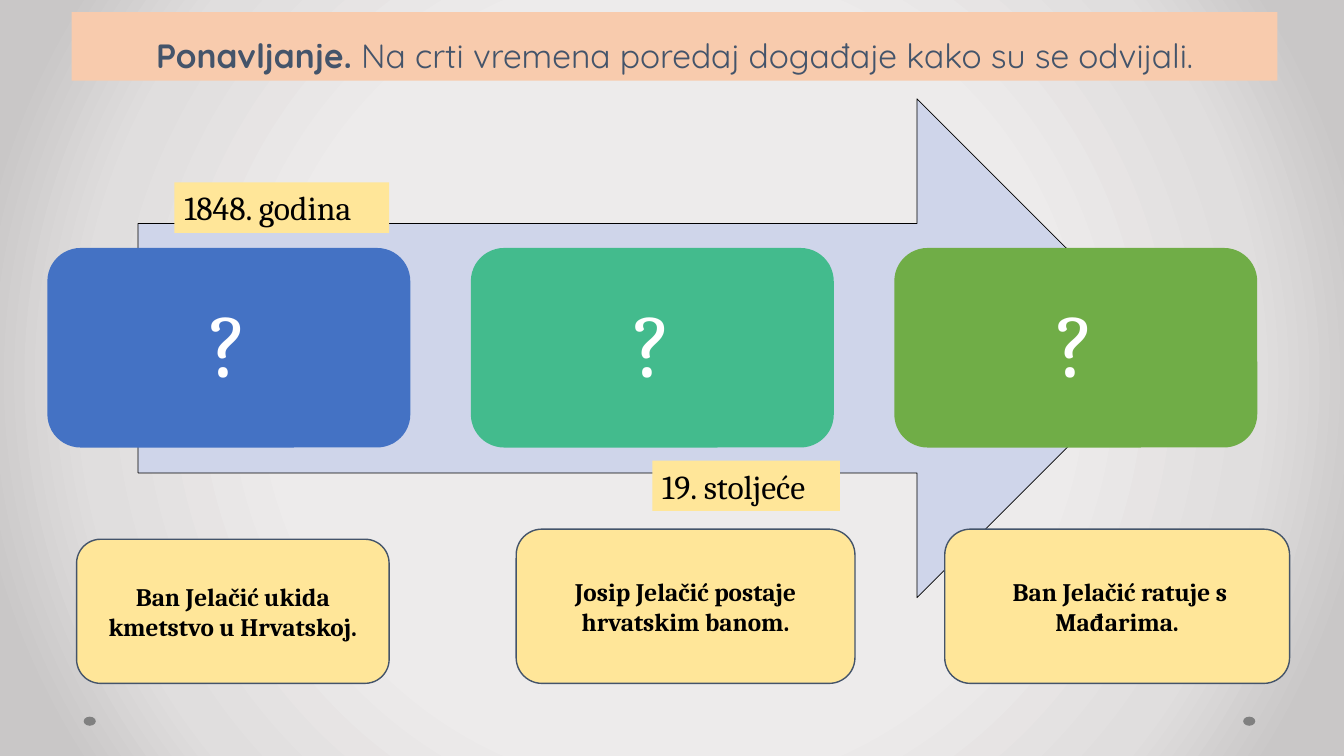
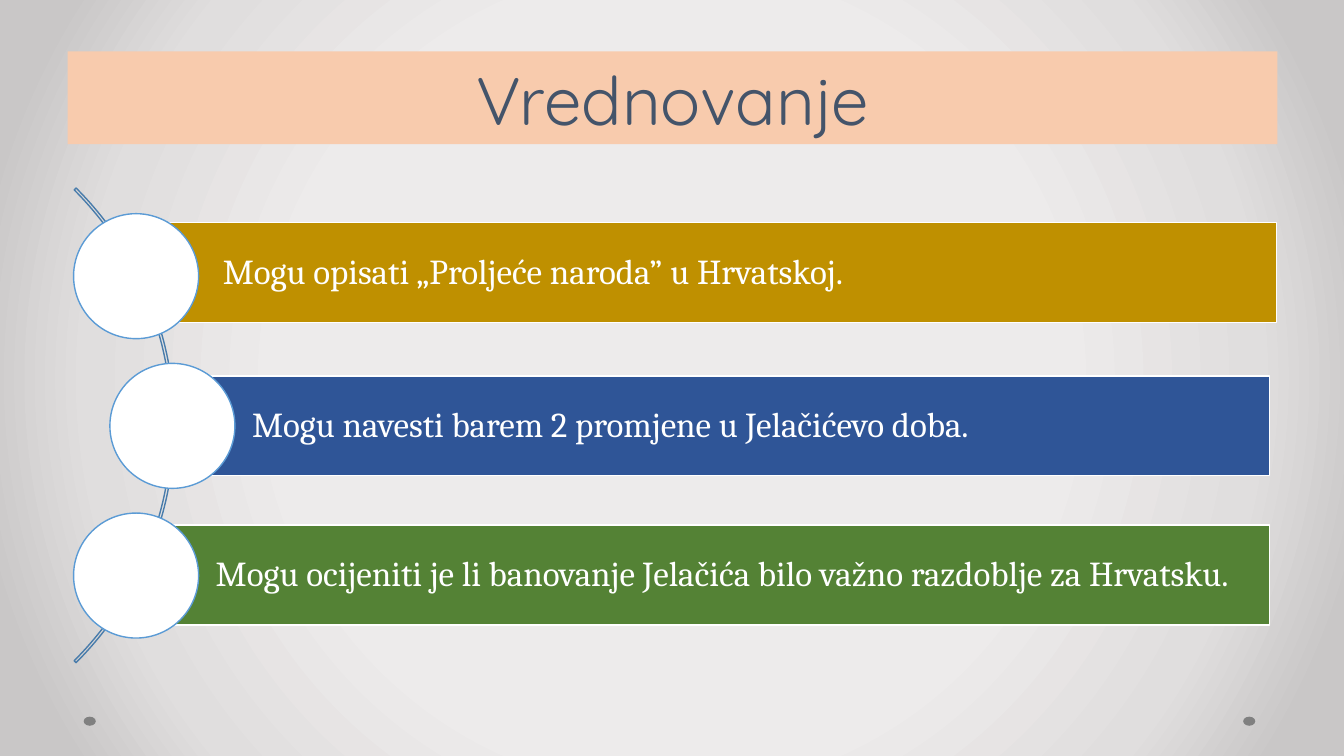
from pptx import Presentation
from pptx.dml.color import RGBColor
from pptx.enum.shapes import MSO_SHAPE
from pptx.enum.text import MSO_ANCHOR, PP_ALIGN
from pptx.oxml import parse_xml
from pptx.oxml.ns import nsdecls, qn
from pptx.util import Inches, Pt

PEACH = RGBColor(0xF8, 0xCB, 0xAD)
SLATE = RGBColor(0x44, 0x54, 0x6A)
GRAY = RGBColor(0x80, 0x80, 0x80)
BLACK = RGBColor(0x00, 0x00, 0x00)
WHITE = RGBColor(0xFF, 0xFF, 0xFF)
CREAM = RGBColor(0xFF, 0xE6, 0x99)
LAVENDER = RGBColor(0xCF, 0xD5, 0xEA)
BLUE = RGBColor(0x44, 0x72, 0xC4)
TEAL = RGBColor(0x43, 0xBB, 0x8D)
GREEN = RGBColor(0x70, 0xAD, 0x47)
GOLD = RGBColor(0xBF, 0x90, 0x00)
NAVY = RGBColor(0x2F, 0x55, 0x97)
FOREST = RGBColor(0x54, 0x82, 0x35)
SKY = RGBColor(0x5B, 0x9B, 0xD5)
STEEL = RGBColor(0x49, 0x7C, 0xAB)

BACKGROUND = (
    f'<a:gradFill {nsdecls("a")} rotWithShape="1"><a:gsLst>'
    '<a:gs pos="50000"><a:srgbClr val="EDEBEB"/></a:gs>'
    '<a:gs pos="76000"><a:srgbClr val="E0DEDE"/></a:gs>'
    '<a:gs pos="92000"><a:srgbClr val="C9C7C7"/></a:gs></a:gsLst>'
    '<a:path path="circle"><a:fillToRect l="50000" t="50000" r="50000" b="50000"/></a:path>'
    '</a:gradFill>'
)


def add_box(slide, kind, box, text="", fill=None, line=None, line_width=1, font="Cambria",
            size=24, color=BLACK, bold=False, lead="", align=PP_ALIGN.CENTER,
            anchor=MSO_ANCHOR.MIDDLE, spacing=1.0, insets=(0.1, 0.05, 0.1, 0.05)):
    shape = slide.shapes.add_shape(kind, *[Inches(length) for length in box])
    shape.shadow.inherit = False
    if fill is None:
        shape.fill.background()
    else:
        shape.fill.solid()
        shape.fill.fore_color.rgb = fill
    if line is None:
        shape.line.fill.background()
    else:
        shape.line.color.rgb = line
        shape.line.width = Pt(line_width)
    if text:
        frame = shape.text_frame
        frame.word_wrap = True
        frame.vertical_anchor = anchor
        (frame.margin_left, frame.margin_top,
         frame.margin_right, frame.margin_bottom) = [Inches(inset) for inset in insets]
        paragraph = frame.paragraphs[0]
        paragraph.alignment = align
        paragraph.line_spacing = spacing
        for content, is_bold in ((lead, True), (text, bold)):
            if content:
                run = paragraph.add_run()
                run.text = content
                run.font.name = font
                run.font.size = Pt(size)
                run.font.bold = is_bold
                run.font.color.rgb = color
    return shape


def add_titled_slide(box, title, size, lead=""):
    slide = presentation.slides.add_slide(presentation.slide_layouts[6])
    slide.background.fill.gradient()
    gradient = slide.element.find(".//" + qn("a:gradFill"))
    gradient.getparent().replace(gradient, parse_xml(BACKGROUND))
    for left in (12.33, 0.83):
        add_box(slide, MSO_SHAPE.OVAL, (left, 7.11, 0.12, 0.09), fill=GRAY)
    add_box(slide, MSO_SHAPE.RECTANGLE, box, title, fill=PEACH, font="Quicksand", size=size,
            color=SLATE, lead=lead, anchor=MSO_ANCHOR.BOTTOM, spacing=Pt(48))
    return slide


presentation = Presentation()
presentation.slide_width = Inches(13.33)
presentation.slide_height = Inches(7.5)

timeline = add_titled_slide((0.71, 0.12, 11.96, 0.68),
                            " Na crti vremena poredaj događaje kako su se odvijali.",
                            24, lead="Ponavljanje.")
add_box(timeline, MSO_SHAPE.RIGHT_ARROW, (1.37, 0.98, 10.2, 4.95),
        fill=LAVENDER, line=BLACK, line_width=0.5)
for index, fill in enumerate((BLUE, TEAL, GREEN)):
    add_box(timeline, MSO_SHAPE.ROUNDED_RECTANGLE, (0.47 + index * 4.2, 2.46, 3.6, 1.98), "?",
            fill=fill, size=65, color=WHITE, spacing=0.9)

events = (
    ((0.76, 5.35, 3.1, 1.43), "Ban Jelačić ukida kmetstvo u Hrvatskoj."),
    ((5.12, 5.25, 3.36, 1.53), "Josip Jelačić postaje hrvatskim banom."),
    ((9.37, 5.25, 3.42, 1.53), " Ban Jelačić ratuje s Mađarima."),
)
for box, text in events:
    add_box(timeline, MSO_SHAPE.ROUNDED_RECTANGLE, box, text,
            fill=CREAM, line=SLATE, size=18, bold=True)

periods = (
    ((1.73, 1.81, 2.13, 0.5), "1848. godina"),
    ((6.47, 4.57, 1.86, 0.5), "19. stoljeće"),
)
for box, text in periods:
    add_box(timeline, MSO_SHAPE.RECTANGLE, box, text, fill=CREAM,
            align=PP_ALIGN.LEFT, anchor=MSO_ANCHOR.TOP)

evaluation = add_titled_slide((0.67, 0.51, 12, 0.92), "Vrednovanje", 48)
arc = add_box(evaluation, MSO_SHAPE.BLOCK_ARC, (-4.93, 0.89, 6.66, 6.66), line=STEEL)
for index, value in enumerate((189, 27, 0.004)):
    arc.adjustments[index] = value

goals = (
    (1.42, 2.21, 11.24, 0.73, GOLD, "Mogu opisati „Proljeće naroda” u Hrvatskoj."),
    (1.71, 3.73, 10.88, 1.09, NAVY, "Mogu navesti barem 2 promjene u Jelačićevo doba."),
    (1.35, 5.21, 11.24, 0.73, FOREST,
     "Mogu ocijeniti je li banovanje Jelačića bilo važno razdoblje za Hrvatsku."),
)
for index, (left, top, width, circle_left, fill, text) in enumerate(goals):
    add_box(evaluation, MSO_SHAPE.RECTANGLE, (left, top, width, 0.99), text, fill=fill,
            line=WHITE, size=25, color=WHITE, align=PP_ALIGN.LEFT, spacing=0.9,
            insets=(0.79, 0.07, 0.07, 0.07))
    add_box(evaluation, MSO_SHAPE.OVAL, (circle_left, 2.12 + index * 1.485, 1.24, 1.24),
            fill=WHITE, line=SKY)

presentation.save("out.pptx")
